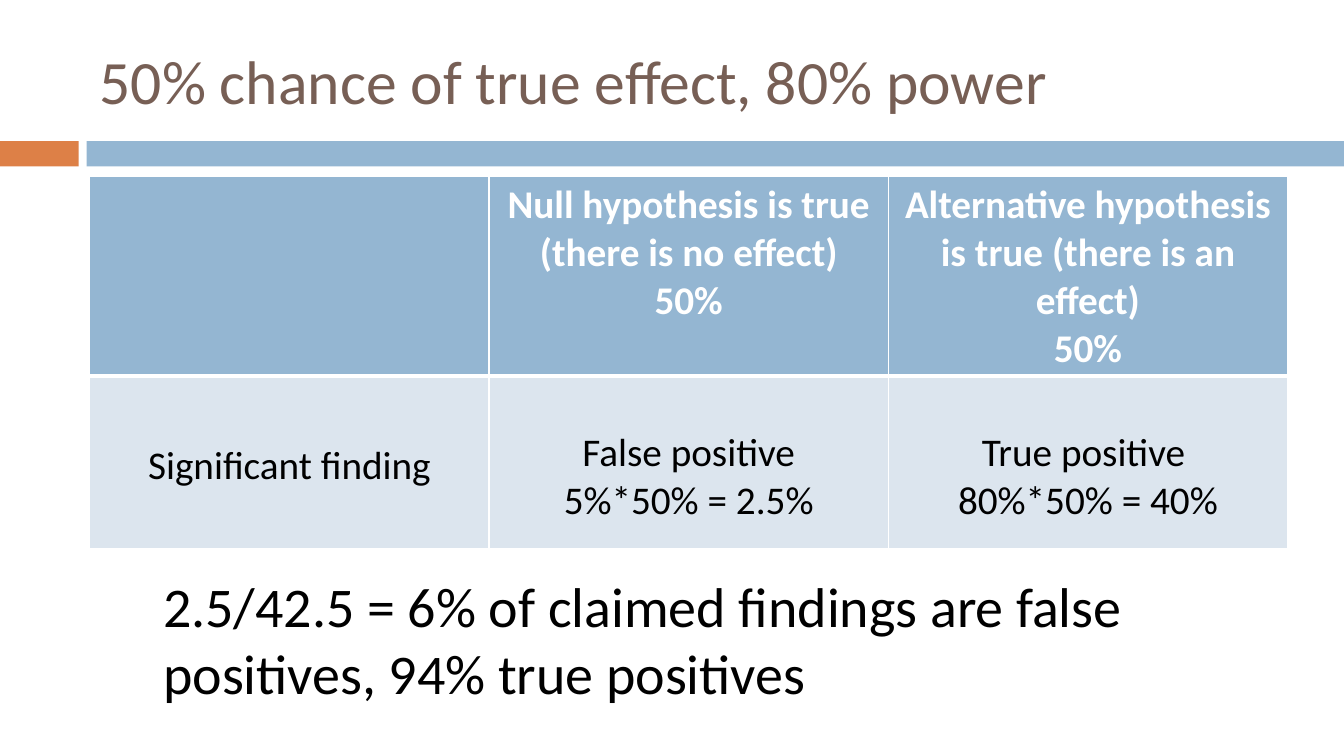
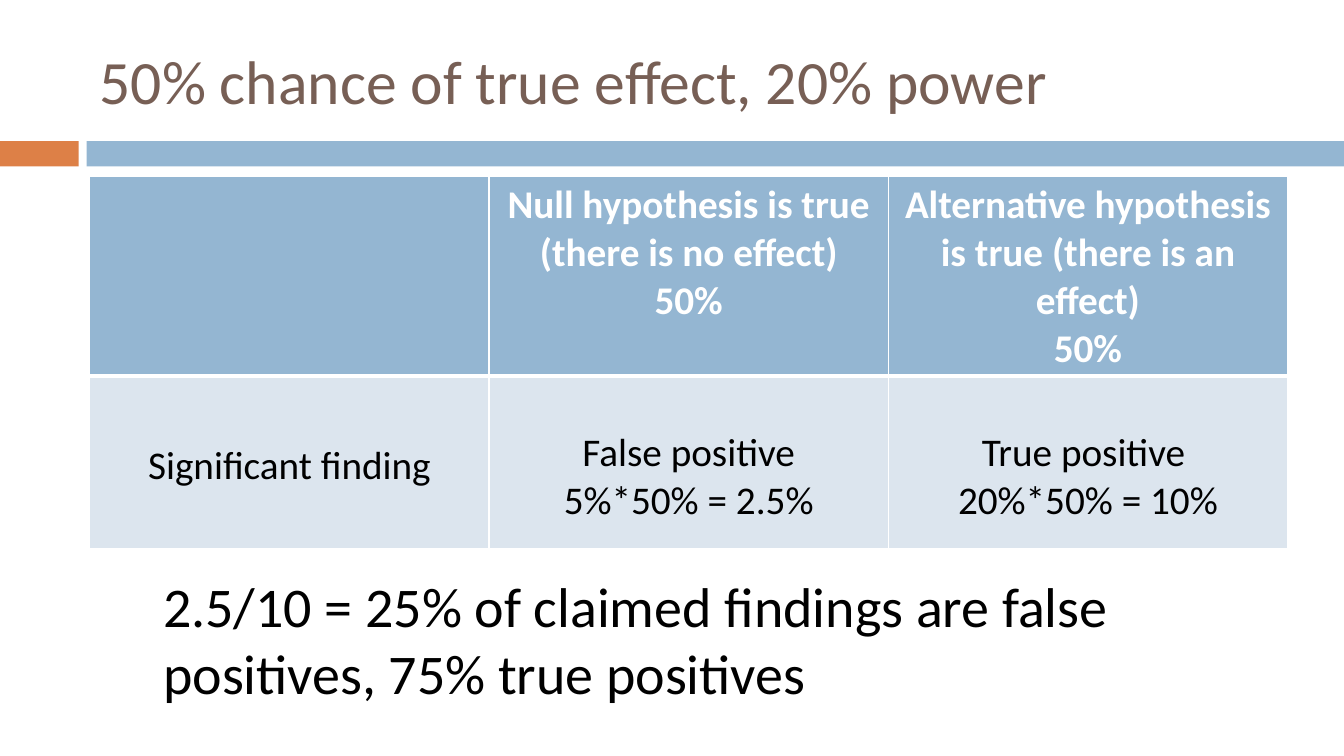
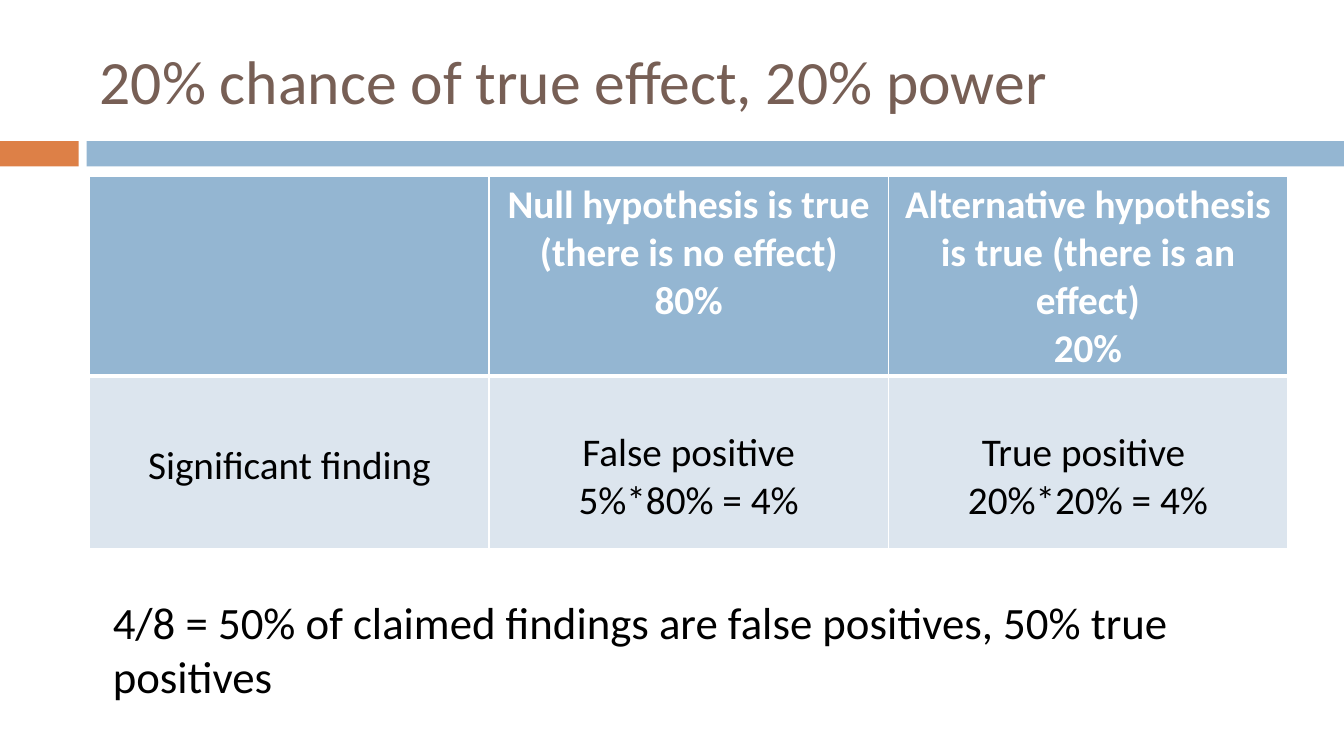
from dataclasses import dataclass

from lxml import etree
from pptx import Presentation
from pptx.dml.color import RGBColor
from pptx.enum import shapes, text
from pptx.oxml import ns
from pptx.util import Inches, Pt


@dataclass(frozen=True)
class Theme:
    font: str = "Calibri"
    title: str = "775F55"
    accent: str = "DD8047"
    band: str = "94B6D2"
    body_fill: str = "DCE5EE"
    ink: str = "000000"
    white: str = "FFFFFF"
    title_size: int = 44
    table_size: int = 28
    summary_size: int = 40
    small_summary_size: int = 32


class Deck:
    def __init__(self, theme):
        self.t = theme
        self.prs = Presentation()
        self.prs.slide_width = Inches(13.33)
        self.prs.slide_height = Inches(7.5)
        self.s = None

    def new_slide(self, title):
        """Add a slide with the shared bands and title."""
        self.s = self.prs.slides.add_slide(self.prs.slide_layouts[6])
        self.band(0, 0.78, self.t.accent)
        self.band(0.86, 12.47, self.t.band)
        self.text(title, (0.89, 0.25, 11.89, 1.08), self.t.title_size,
                  self.t.title, text.MSO_ANCHOR.MIDDLE)

    def band(self, left, width, color):
        sp = self.s.shapes.add_shape(
            shapes.MSO_SHAPE.RECTANGLE,
            Inches(left), Inches(1.4), Inches(width), Inches(0.25))
        sp.shadow.inherit = False
        sp.fill.solid()
        sp.fill.fore_color.rgb = RGBColor.from_string(color)
        sp.line.fill.background()

    def text(self, words, box, size, color, anchor=text.MSO_ANCHOR.TOP):
        tf = self.s.shapes.add_textbox(*map(Inches, box)).text_frame
        tf.word_wrap = True
        tf.vertical_anchor = anchor
        tf.text = words
        self.style(tf.paragraphs[0], size, color)

    def style(self, p, size, color, bold=False):
        for r in p.runs:
            r.font.name = self.t.font
            r.font.size = Pt(size)
            r.font.bold = bold
            r.font.color.rgb = RGBColor.from_string(color)

    def table(self, rows, left=0.89, top=1.75, col_width=3.96,
              heights=(1.98, 1.71)):
        """Draw a header row and a body row; each cell is a list of lines."""
        cols = len(rows[0])
        tbl = self.s.shapes.add_table(
            len(rows), cols, Inches(left), Inches(top),
            Inches(col_width * cols), Inches(sum(heights))).table
        for col in tbl.columns:
            col.width = Inches(col_width)
        for i, (row, height) in enumerate(zip(rows, heights)):
            tbl.rows[i].height = Inches(height)
            for j, lines in enumerate(row):
                self.cell(tbl.cell(i, j), lines, header=i == 0)

    def cell(self, cell, lines, header):
        t = self.t
        cell.fill.solid()
        cell.fill.fore_color.rgb = RGBColor.from_string(
            t.band if header else t.body_fill)
        if not header:
            # One-line labels sit a little lower than two-line ones
            cell.margin_top = Inches(0.66 if len(lines) == 1 else 0.53)
        cell.text = "\n".join(lines)
        for p in cell.text_frame.paragraphs:
            p.alignment = text.PP_ALIGN.CENTER
            self.style(p, t.table_size, t.white if header else t.ink, header)
        # A thick rule divides the header from the body
        self.borders(cell, {"L": 1, "R": 1, "T": 1 if header else 3,
                            "B": 3 if header else 1})

    def borders(self, cell, widths):
        tc_pr = cell._tc.get_or_add_tcPr()
        for i, (side, width) in enumerate(widths.items()):
            ln = etree.Element(ns.qn(f"a:ln{side}"), w=str(Pt(width)))
            fill = etree.SubElement(ln, ns.qn("a:solidFill"))
            etree.SubElement(fill, ns.qn("a:srgbClr"), val=self.t.white)
            tc_pr.insert(i, ln)


def main():
    theme = Theme()
    deck = Deck(theme)
    large = ((1.52, 5.62, 11.37, 1.45), theme.summary_size)
    small = ((1.02, 5.85, 11.31, 1.18), theme.small_summary_size)

    # Chance of effect, power, chance of none, false and true positives,
    # summary, summary style
    scenarios = [
        ("50%", "80%", "50%", "2.5%", "40%",
         "2.5/42.5 = 6% of claimed findings are false positives, "
         "94% true positives", large),
        ("50%", "20%", "50%", "2.5%", "10%",
         "2.5/10 = 25% of claimed findings are false positives, "
         "75% true positives", large),
        ("20%", "20%", "80%", "4%", "4%",
         "4/8 = 50% of claimed findings are false positives, "
         "50% true positives", small),
    ]
    for effect, power, null, false_pos, true_pos, summary, style in scenarios:
        deck.new_slide(f"{effect} chance of true effect, {power} power")
        deck.table([
            [[],
             ["Null hypothesis is true (there is no effect)", null],
             ["Alternative hypothesis is true (there is an effect)", effect]],
            [["Significant finding"],
             ["False positive", f"5%*{null} = {false_pos}"],
             ["True positive ", f"{power}*{effect} = {true_pos}"]],
        ])
        box, size = style
        deck.text(summary, box, size, theme.ink)

    deck.prs.save("out.pptx")


if __name__ == "__main__":
    main()
